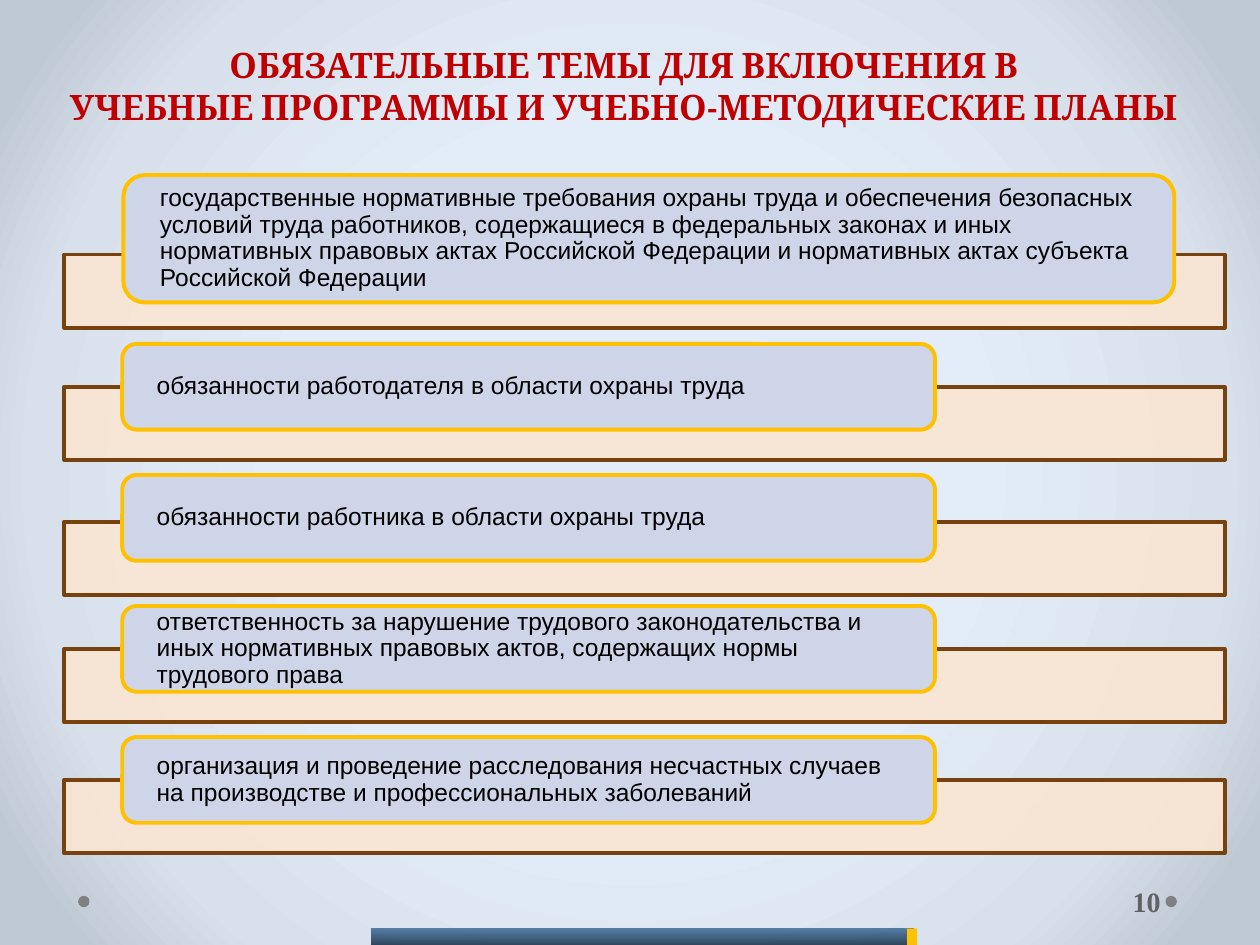
from lxml import etree
from pptx import Presentation
from pptx.dml.color import RGBColor
from pptx.enum.shapes import MSO_SHAPE
from pptx.enum.text import MSO_ANCHOR, PP_ALIGN
from pptx.oxml.ns import qn
from pptx.util import Inches, Pt

RECT, ROUND, OVAL = MSO_SHAPE.RECTANGLE, MSO_SHAPE.ROUNDED_RECTANGLE, MSO_SHAPE.OVAL
LEFT, CENTER, MIDDLE = PP_ALIGN.LEFT, PP_ALIGN.CENTER, MSO_ANCHOR.MIDDLE

# The slide is a grid of 100 columns by 75 rows
CELL = Inches(0.1)
COLS, ROWS = 100, 75

COLORS = {
    "title": "C00000", "number": "626262", "text": "000000", "dot": "808080",
    "bar": "FAE6D3", "bar_line": "77420D", "card": "CED5E8", "gold": "FFC000",
    "bg_in": "E3EDF9", "bg_mid": "D8E0EB", "bg_out": "BFC9D4",
    "strip_top": "003C73", "strip_end": "001C35",
}
TITLE = {"size": Pt(20), "name": "Cambria", "bold": True}
NUMBER = {"size": Pt(16), "name": "Times New Roman", "bold": True}
BODY = {"size": Pt(14), "name": "Arial", "bold": False}

# Each topic: row of the bar behind it, then its wording
TOPICS = [
    (20.2, "государственные нормативные требования охраны труда и обеспечения безопасных "
           "условий труда работников, содержащиеся в федеральных законах и иных нормативных "
           "правовых актах Российской Федерации и нормативных актах субъекта Российской Федерации"),
    (30.7, "обязанности работодателя в области охраны труда"),
    (41.4, "обязанности работника в области охраны труда"),
    (51.5, "ответственность за нарушение трудового законодательства и иных нормативных "
           "правовых актов, содержащих нормы трудового права"),
    (61.9, "организация и проведение расследования несчастных случаев на производстве "
           "и профессиональных заболеваний"),
]
FIRST_CARD = (9.8, 13.9, 83.4, 10.1)
CARD_TOP, CARD_STEP = 16.9, 10.4


def grid(*cells):
    return [round(c * CELL) for c in cells]


def rgb(name):
    return RGBColor.from_string(COLORS[name])


def set_alpha(color_el, percent):
    etree.SubElement(color_el, qn("a:alpha"), val=str(percent * 1000))


def set_gradient(fill, root, stops, angle=None):
    """Stops are (position, colour, opacity); no angle gives a circle."""
    fill.gradient()
    grad = root.find(".//" + qn("a:gradFill"))
    for child in list(grad):
        grad.remove(child)
    stop_list = etree.SubElement(grad, qn("a:gsLst"))
    for pos, name, opacity in stops:
        gs = etree.SubElement(stop_list, qn("a:gs"), pos=str(pos * 1000))
        color = etree.SubElement(gs, qn("a:srgbClr"), val=COLORS[name])
        if opacity < 100:
            set_alpha(color, opacity)
    if angle is None:
        path = etree.SubElement(grad, qn("a:path"), path="circle")
        etree.SubElement(path, qn("a:fillToRect"), l="50000", t="50000", r="50000", b="50000")
    else:
        etree.SubElement(grad, qn("a:lin"), ang=str(angle * 60000), scaled="0")


def add_box(s, kind, at, fill=None, line=None, opacity=100):
    sp = s.shapes.add_shape(kind, *grid(*at))
    sp.shadow.inherit = False
    if fill:
        sp.fill.solid()
        sp.fill.fore_color.rgb = rgb(fill)
        if opacity < 100:
            set_alpha(sp.element.spPr.find(".//" + qn("a:srgbClr")), opacity)
    if line:
        sp.line.color.rgb = rgb(line)
        sp.line.width = Pt(2.25)
    else:
        sp.line.fill.background()
    return sp


def write(sp, text, font, color, insets, align=LEFT, spacing=1.0):
    tf = sp.text_frame
    tf.word_wrap = True
    tf.vertical_anchor = MIDDLE
    tf.margin_left, tf.margin_top, tf.margin_right, tf.margin_bottom = grid(*insets)
    p = tf.paragraphs[0]
    p.text = text
    p.alignment = align
    p.line_spacing = spacing
    for r in p.runs:
        r.font.color.rgb = rgb(color)
        for key, value in font.items():
            setattr(r.font, key, value)


def add_text(s, at, *args, **kwargs):
    write(s.shapes.add_textbox(*grid(*at)), *args, **kwargs)


def add_topic(s, index, bar_row, text):
    add_box(s, RECT, (5.1, bar_row, 92.1, 5.8), "bar", "bar_line", opacity=90)
    at = (9.7, CARD_TOP + index * CARD_STEP, 64.5, 6.8) if index else FIRST_CARD
    card = add_box(s, ROUND, at, "card", "gold")
    write(card, text, BODY, "text", (2.4, 0, 2.4, 0), spacing=0.9)


def add_footer(s):
    for col in (92.5, 6.2):
        add_box(s, OVAL, (col, 71.1, 0.9, 0.9), "dot")
    add_text(s, (89.4, 69.5, 5.6, 4), "10", NUMBER, "number", (0.5, 0.5, 1, 0.5))
    strip = add_box(s, RECT, (29.5, 73.7, 43, 1.3))
    set_gradient(strip.fill, strip.element,
                 [(0, "strip_top", 60), (100, "strip_end", 80)], angle=90)
    add_box(s, RECT, (72, 73.7, 0.8, 1.3), "gold")


def main():
    prs = Presentation()
    prs.slide_width, prs.slide_height = grid(COLS, ROWS)
    s = prs.slides.add_slide(prs.slide_layouts[6])

    # Background
    set_gradient(s.background.fill, s.element,
                 [(43, "bg_in", 100), (76, "bg_mid", 100), (92, "bg_out", 100)])
    add_footer(s)

    # Title
    add_text(s, (0, 2.1, COLS, 9.4),
             "ОБЯЗАТЕЛЬНЫЕ ТЕМЫ ДЛЯ ВКЛЮЧЕНИЯ В\v"
             "УЧЕБНЫЕ ПРОГРАММЫ И УЧЕБНО-МЕТОДИЧЕСКИЕ ПЛАНЫ",
             TITLE, "title", (1.2, 1.2, 2.2, 1.2), align=CENTER)

    # Topics
    for index, (bar_row, text) in enumerate(TOPICS):
        add_topic(s, index, bar_row, text)

    prs.save("out.pptx")


if __name__ == "__main__":
    main()
